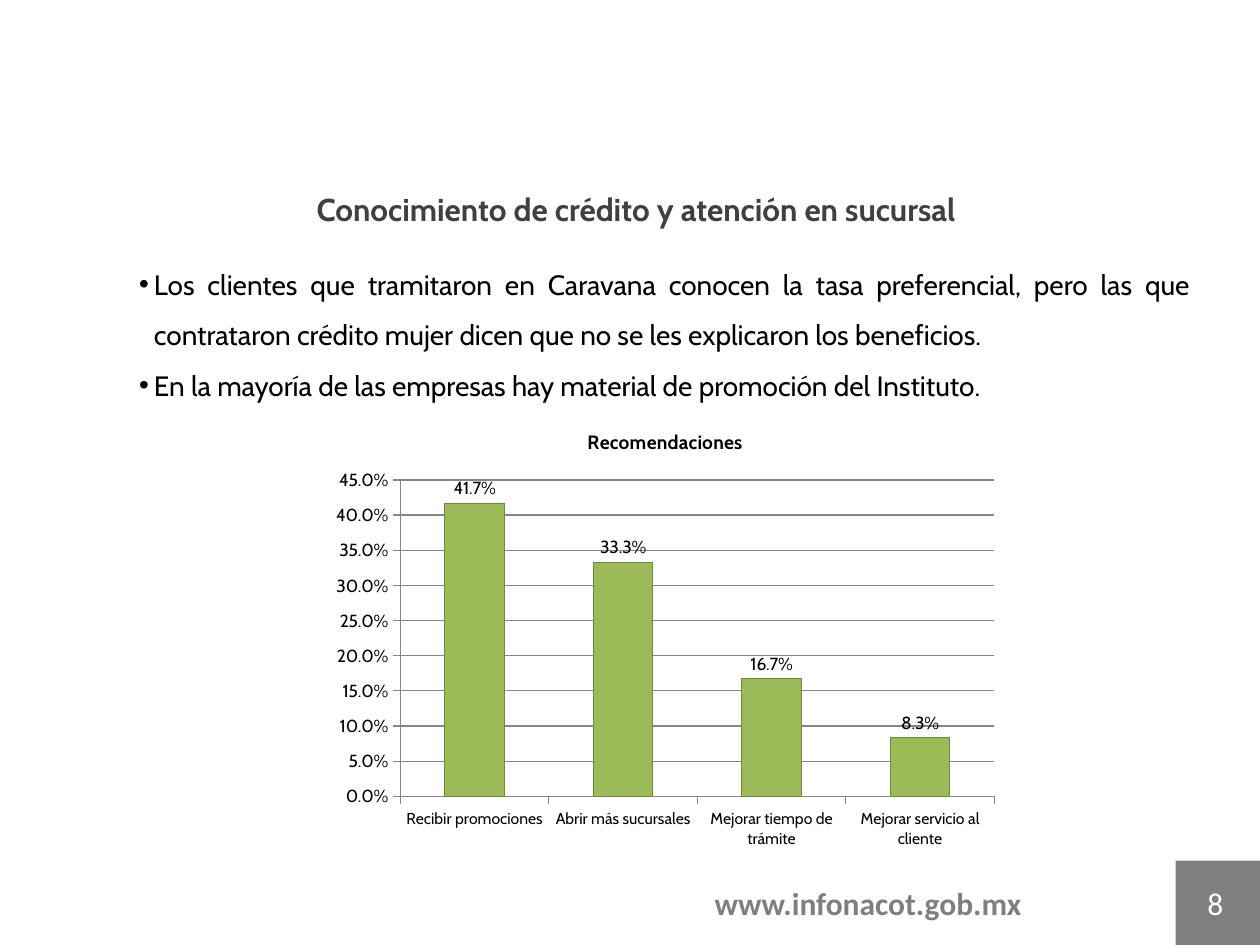
from dataclasses import dataclass

import pptx
import pptx.chart.data
import pptx.dml.color
import pptx.enum.chart
import pptx.enum.shapes
import pptx.enum.text
import pptx.oxml
import pptx.oxml.ns
import pptx.util
from pptx.util import Cm

ALIGN = pptx.enum.text.PP_ALIGN
ANCHOR = pptx.enum.text.MSO_ANCHOR
GREY_LINE = "868686"


@dataclass(frozen=True)
class Area:
    """Place on the slide, in centimetres."""
    left: float
    top: float
    width: float
    height: float

    def lengths(self) -> tuple:
        return Cm(self.left), Cm(self.top), Cm(self.width), Cm(self.height)


@dataclass(frozen=True)
class Recommendation:
    label: str
    share: float


RECOMMENDATIONS = [
    Recommendation("Recibir promociones", 0.417),
    Recommendation("Abrir más sucursales", 0.333),
    Recommendation("Mejorar tiempo de trámite", 0.167),
    Recommendation("Mejorar servicio al cliente", 0.083),
]
FINDINGS = [
    "Los clientes que tramitaron en Caravana conocen la tasa preferencial, pero las que "
    "contrataron crédito mujer dicen que no se les explicaron los beneficios.",
    "En la mayoría de las empresas hay material de promoción del Instituto.",
]


def rgb(value: str) -> pptx.dml.color.RGBColor:
    return pptx.dml.color.RGBColor.from_string(value)


def place(shape, area: Area) -> None:
    shape.left, shape.top, shape.width, shape.height = area.lengths()


def style_font(font, size: float, color: str = "000000", name: str = "Cabin",
               bold: bool = False) -> None:
    font.size = pptx.util.Pt(size)
    font.name = name
    font.bold = bold
    font.color.rgb = rgb(color)


def add_bullet(paragraph) -> None:
    properties = paragraph._p.get_or_add_pPr()
    properties.set("marL", str(Cm(0.79)))
    properties.set("indent", str(-Cm(0.3)))
    namespace = pptx.oxml.ns.nsdecls("a")
    for tag in ('buFont {} typeface="Arial"', 'buChar {} char="•"'):
        properties.append(pptx.oxml.parse_xml(f"<a:{tag.format(namespace)}/>"))


def write_text(shape, lines: list[str], *, align=ALIGN.CENTER, anchor=ANCHOR.TOP,
               spacing: float = 1.0, bullets: bool = False, **font_format) -> None:
    frame = shape.text_frame
    frame.word_wrap = True
    frame.auto_size = pptx.enum.text.MSO_AUTO_SIZE.NONE
    frame.vertical_anchor = anchor
    for index, line in enumerate(lines):
        paragraph = frame.paragraphs[0] if index == 0 else frame.add_paragraph()
        paragraph.alignment = align
        paragraph.line_spacing = spacing
        paragraph.space_before = pptx.util.Pt(0)
        if bullets:
            add_bullet(paragraph)
        run = paragraph.add_run()
        run.text = line
        style_font(run.font, **font_format)


def add_footer(slide, address: str, number: str) -> None:
    website = slide.shapes.add_textbox(*Area(11.3, 17.7, 12.4, 1.02).lengths())
    write_text(website, [address], size=18, name="Calibri", color="7F7F7F", bold=True)

    corner = slide.shapes.add_shape(pptx.enum.shapes.MSO_SHAPE.RECTANGLE,
                                    *Area(23.7, 17.35, 1.7, 1.7).lengths())
    corner.shadow.inherit = False
    corner.fill.solid()
    corner.fill.fore_color.rgb = rgb("808080")
    corner.line.fill.background()

    page = slide.shapes.add_textbox(*Area(23.7, 17.35, 1.6, 1.7).lengths())
    write_text(page, [number], anchor=ANCHOR.MIDDLE, size=18, name="Calibri",
               color="FFFFFF")


def style_axis(axis, size: float) -> None:
    axis.major_tick_mark = pptx.enum.chart.XL_TICK_MARK.OUTSIDE
    axis.minor_tick_mark = pptx.enum.chart.XL_TICK_MARK.NONE
    axis.format.line.color.rgb = rgb(GREY_LINE)
    style_font(axis.tick_labels.font, size)


def add_recommendations(slide, title: str, items: list[Recommendation]) -> None:
    data = pptx.chart.data.CategoryChartData(number_format="0.0%")
    data.categories = [item.label for item in items]
    data.add_series(title, [item.share for item in items])
    chart = slide.shapes.add_chart(pptx.enum.chart.XL_CHART_TYPE.COLUMN_CLUSTERED,
                                   *Area(6.5, 8.26, 13.82, 9.02).lengths(), data).chart
    style_font(chart.font, 10)
    chart.has_legend = False
    chart.has_title = True
    heading = chart.chart_title.text_frame
    heading.text = title
    style_font(heading.paragraphs[0].runs[0].font, 11, bold=True)

    style_axis(chart.category_axis, 9)
    shares = chart.value_axis
    style_axis(shares, 10)
    shares.minimum_scale, shares.maximum_scale, shares.major_unit = 0, 0.45, 0.05
    shares.has_major_gridlines = True
    shares.major_gridlines.format.line.color.rgb = rgb(GREY_LINE)
    shares.tick_labels.number_format = "0.0%"
    shares.tick_labels.number_format_is_linked = False

    plot = chart.plots[0]
    plot.gap_width = 150
    plot.vary_by_categories = False
    bars = plot.series[0].format
    bars.fill.solid()
    bars.fill.fore_color.rgb = rgb("9BBB59")
    bars.line.color.rgb = rgb("71893F")
    plot.has_data_labels = True
    labels = plot.data_labels
    labels.show_value = True
    labels.number_format = "0.0%"
    labels.number_format_is_linked = False
    labels.position = pptx.enum.chart.XL_LABEL_POSITION.OUTSIDE_END
    style_font(labels.font, 10)


def main() -> None:
    deck = pptx.Presentation()
    deck.slide_width, deck.slide_height = Cm(25.4), Cm(19.05)
    slide = deck.slides.add_slide(deck.slide_layouts[1])

    heading, findings = slide.placeholders
    place(heading, Area(4.62, 3.71, 16.41, 1.02))
    write_text(heading, ["Conocimiento de crédito y atención en sucursal"],
               size=18, color="404040", bold=True)
    place(findings, Area(2.06, 4.93, 22.2, 3.33))
    write_text(findings, FINDINGS, align=ALIGN.JUSTIFY, spacing=1.5, bullets=True, size=16)

    add_recommendations(slide, "Recomendaciones", RECOMMENDATIONS)
    add_footer(slide, "www.infonacot.gob.mx", "8")
    deck.save("out.pptx")


if __name__ == "__main__":
    main()
